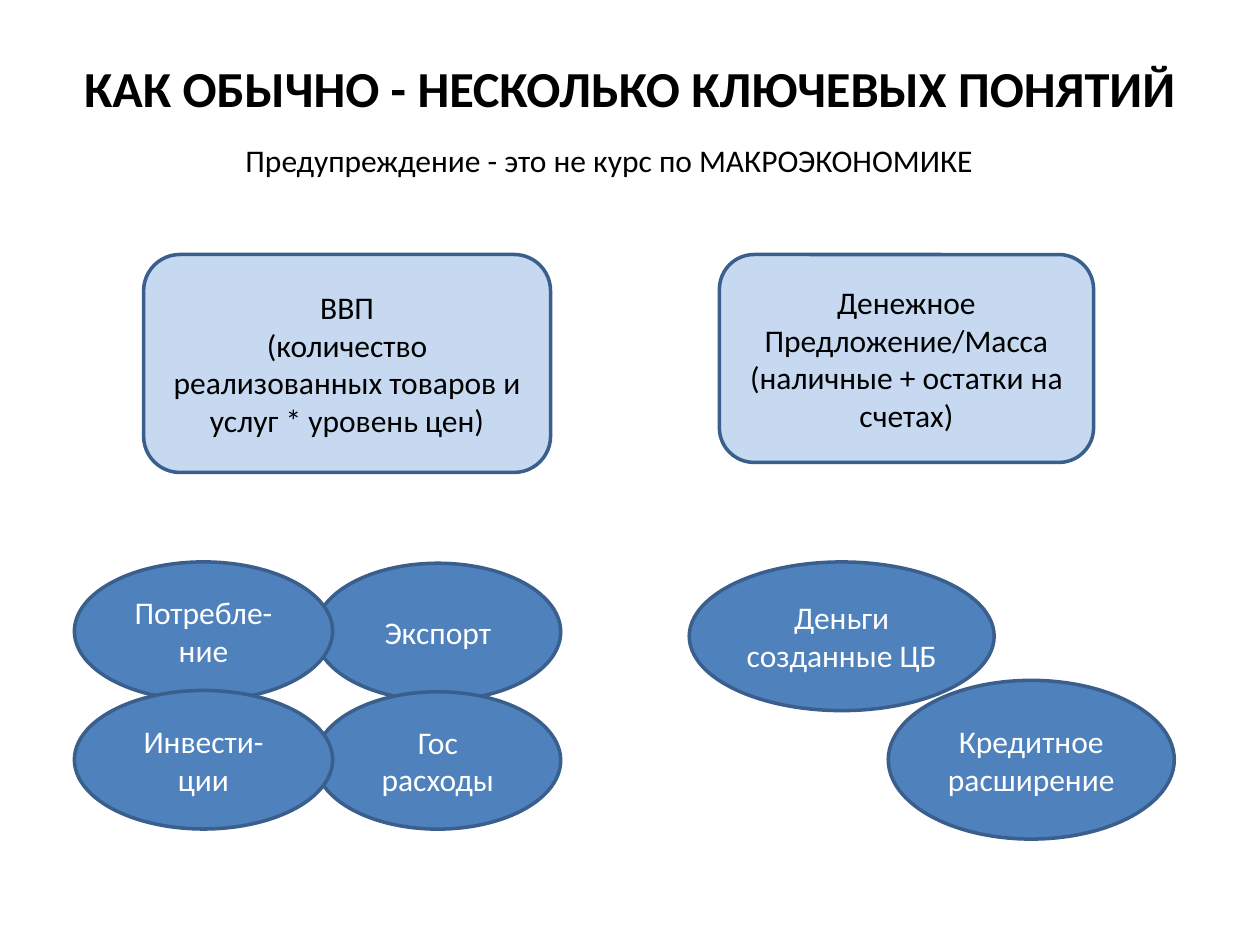
from pptx import Presentation
from pptx.dml.color import RGBColor
from pptx.enum.shapes import MSO_SHAPE as Shape
from pptx.enum.text import MSO_ANCHOR as Anchor, MSO_AUTO_SIZE as AutoSize, PP_ALIGN as Align
from pptx.util import Inches, Pt

BLACK = RGBColor(0x00, 0x00, 0x00)
WHITE = RGBColor(0xFF, 0xFF, 0xFF)
BLUE = RGBColor(0x4F, 0x81, 0xBD)
PALE_BLUE = RGBColor(0xC6, 0xD9, 0xF1)
OUTLINE = RGBColor(0x3A, 0x5F, 0x8C)


class SlideBuilder:
    """Draws styled elements on one slide."""

    font_name = "Calibri"
    body_size = 18
    title_size = 28.8

    def __init__(self, slide):
        self.slide = slide

    def set_text(self, text_frame, text, color, size=body_size, bold=False, align=Align.CENTER):
        text_frame.text = text
        for paragraph in text_frame.paragraphs:
            paragraph.alignment = align
            for run in paragraph.runs:
                run.font.name = self.font_name
                run.font.size = Pt(size)
                run.font.bold = bold
                run.font.color.rgb = color

    def title(self, text, left, top, width, height):
        title = self.slide.shapes.title
        title.left, title.top = Inches(left), Inches(top)
        title.width, title.height = Inches(width), Inches(height)
        title.text_frame.vertical_anchor = Anchor.MIDDLE
        title.text_frame.auto_size = AutoSize.NONE
        self.set_text(title.text_frame, text, BLACK, self.title_size, bold=True)

    def label(self, text, left, top, width, height):
        box = self.slide.shapes.add_textbox(*map(Inches, (left, top, width, height)))
        box.text_frame.word_wrap = False
        box.text_frame.auto_size = AutoSize.SHAPE_TO_FIT_TEXT
        self.set_text(box.text_frame, text, BLACK, align=Align.LEFT)

    def block(self, kind, text, left, top, width, height, fill, color):
        shape = self.slide.shapes.add_shape(kind, *map(Inches, (left, top, width, height)))
        shape.shadow.inherit = False
        shape.fill.solid()
        shape.fill.fore_color.rgb = fill
        shape.line.color.rgb = OUTLINE
        shape.line.width = Pt(2)
        shape.text_frame.word_wrap = True
        shape.text_frame.vertical_anchor = Anchor.MIDDLE
        self.set_text(shape.text_frame, text, color)

    def concept(self, text, left, top, width, height):
        self.block(Shape.ROUNDED_RECTANGLE, text, left, top, width, height, PALE_BLUE, BLACK)

    def component(self, text, left, top, width, height):
        self.block(Shape.OVAL, text, left, top, width, height, BLUE, WHITE)


def main():
    presentation = Presentation()
    presentation.slide_width, presentation.slide_height = Inches(10), Inches(7.5)
    builder = SlideBuilder(presentation.slides.add_slide(presentation.slide_layouts[5]))

    builder.title("КАК ОБЫЧНО - НЕСКОЛЬКО КЛЮЧЕВЫХ ПОНЯТИЙ", 0.5, 0.3, 9, 0.79)
    builder.label("Предупреждение - это не курс по МАКРОЭКОНОМИКЕ", 1.85, 1.07, 6.04, 0.4)

    builder.concept("ВВП\n(количество реализованных товаров и услуг * уровень цен)", 1.14, 2.02, 3.23, 1.73)
    builder.concept("Денежное Предложение/Масса\n(наличные + остатки на счетах)", 5.71, 2.02, 2.97, 1.65)

    gdp_rows = [("Потребле-ние", "Экспорт"), ("Инвести-ции", "Гос расходы")]
    for row, (left_text, right_text) in enumerate(gdp_rows):
        top = 4.46 + row * 1.02
        builder.component(right_text, 2.5, top + 0.01, 1.95, 1.09)
        builder.component(left_text, 0.59, top, 2.05, 1.1)

    builder.component("Кредитное расширение", 7.05, 5.4, 2.27, 1.26)
    builder.component("Деньги созданные ЦБ", 5.47, 4.46, 2.42, 1.18)

    presentation.save("out.pptx")


if __name__ == "__main__":
    main()
